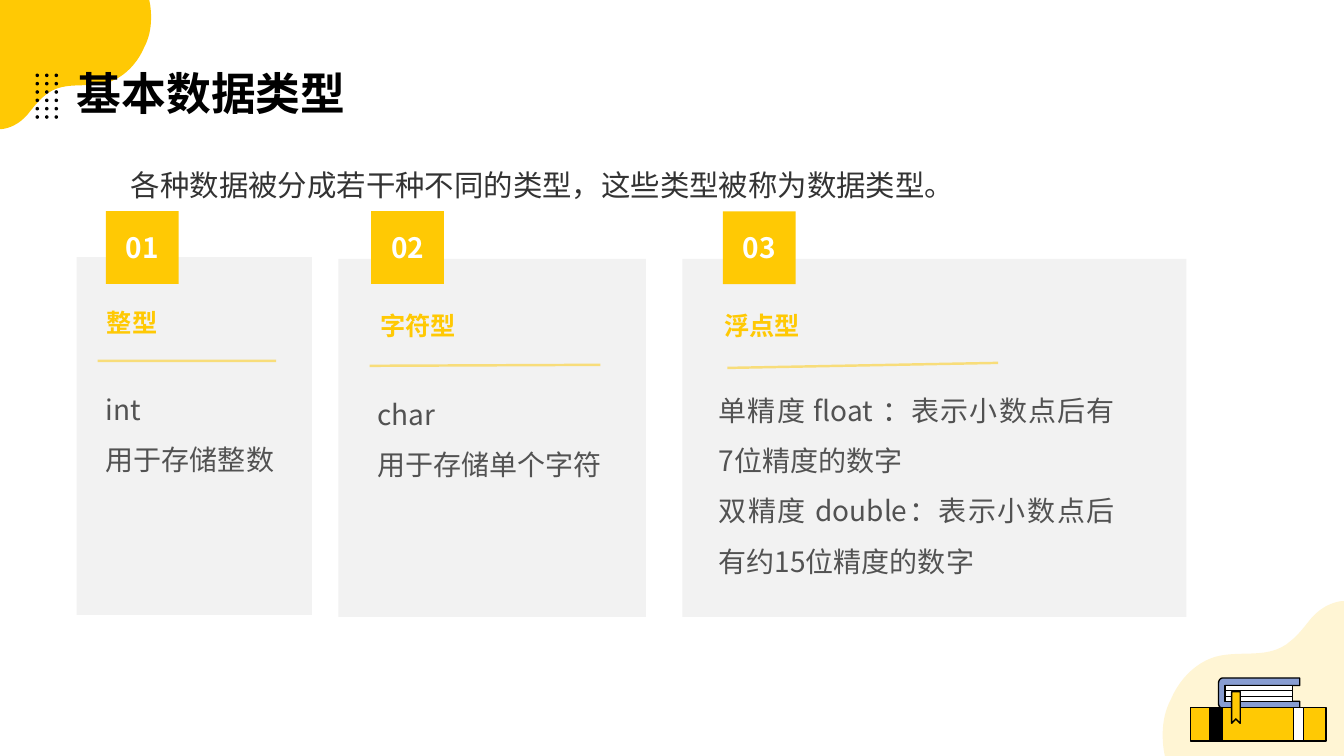
from math import cos, pi, sin

from lxml import etree
from pptx import Presentation
from pptx.dml.color import RGBColor
from pptx.enum.shapes import MSO_CONNECTOR as Connector, MSO_SHAPE as Preset
from pptx.enum.text import MSO_ANCHOR as Anchor, PP_ALIGN as Align
from pptx.oxml.ns import qn
from pptx.util import Pt

FONT = "Noto Sans CJK SC"
YELLOW, BLACK, WHITE, GREY, BLUE = "FFC904", "000000", "FFFFFF", "ADADAD", "889DD2"

# Corner blob: pairs are straight steps, sixes are Bezier curves
BLOB = [(0, 92.2), (1.4, 92.2),
        (7.9, 91.4, 14.4, 87.8, 19.4, 82.1), (23, 77.8, 26.6, 72.7, 31, 69.1),
        (43.2, 57.6, 59, 62.6, 73.4, 59.8), (85.7, 57.6, 97.2, 47.5, 103, 33.8),
        (108, 24.5, 108.7, 13.7, 107.3, 3.6), (106.6, 0), (0, 0)]

# Card box, badge, heading, rule start and end, body box (relative to the card), texts
CARDS = [
    ((54.7, 183.6, 168.1, 255.6), (20.9, -32.7), (21.6, 29.1, 113.8),
     (15, 74.2, 142.6, 74.2), (20.9, 84.7, 165.6), "整型", ["int ", "用于存储整数"]),
    ((241.7, 185, 219.6, 255.6), (23.5, -34.2), (30.1, 29.8, 62),
     (22.3, 76.3, 187.2, 75.6), (27.9, 86.7, 170.6), "字符型", ["char", "用于存储单个字符"]),
    ((487.4, 185, 360, 255.6), (29, -34), (29.9, 29.6, 113.8),
     (32.2, 77.8, 225.6, 74.2), (25.9, 83.8, 283), "浮点型",
     ["单精度 float ：表示小数点后有7位精度的数字",
      "双精度 double：表示小数点后有约15位精度的数字"]),
]


def set_color(target, color, alpha=100):
    target.rgb = RGBColor.from_string(color)
    if alpha < 100:
        node = target._xFill.find(qn("a:srgbClr"))
        etree.SubElement(node, qn("a:alpha")).set("val", str(alpha * 1000))


def style(shape, fill, alpha=100, outline=None):
    shape.shadow.inherit = False
    shape.fill.solid()
    set_color(shape.fill.fore_color, fill, alpha)
    if outline:
        set_color(shape.line.color, outline)
        shape.line.width = Pt(1)
    else:
        shape.line.fill.background()
    return shape


def add_box(page, box, fill, alpha=100, outline=None):
    shape = page.shapes.add_shape(Preset.RECTANGLE, *(Pt(v) for v in box))
    return style(shape, fill, alpha, outline)


def add_line(page, ends, color, width, alpha=100):
    line = page.shapes.add_connector(Connector.STRAIGHT, *(Pt(v) for v in ends))
    line.line.width = Pt(width)
    set_color(line.line.color, color, alpha)
    etree.SubElement(line._element.spPr, qn("a:effectLst"))


def flatten(outline, steps=12):
    points = []
    for part in outline:
        if len(part) == 2:
            points.append(part)
            continue
        ends = [points[-1], part[:2], part[2:4], part[4:]]
        for step in range(1, steps + 1):
            t = step / steps
            weights = ((1 - t) ** 3, 3 * t * (1 - t) ** 2, 3 * t * t * (1 - t), t ** 3)
            points.append(tuple(sum(w * end[axis] for w, end in zip(weights, ends))
                                for axis in (0, 1)))
    return points


def add_outlines(page, origin, outlines, fill, alpha=100, edge=None, scale=1):
    left, top = origin
    builder = None
    for outline in outlines:
        points = [(Pt(left + scale * x), Pt(top + scale * y)) for x, y in flatten(outline)]
        if builder is None:
            builder = page.shapes.build_freeform(*points[0], scale=1.0)
        else:
            builder.move_to(*points[0])
        builder.add_line_segments(points[1:], close=True)
    return style(builder.convert_to_shape(), fill, alpha, edge)


def write(shape, lines, size, color, bold=False, align=Align.LEFT,
          anchor=Anchor.TOP, spacing=None, inset=(0, 0), wrap=True):
    frame = shape.text_frame
    frame.word_wrap = wrap
    frame.vertical_anchor = anchor
    frame.margin_left = frame.margin_right = Pt(inset[0])
    frame.margin_top = frame.margin_bottom = Pt(inset[1])
    for index, line in enumerate(lines):
        para = frame.add_paragraph() if index else frame.paragraphs[0]
        para.add_run().text = line
        para.alignment = align
        if spacing:
            para.line_spacing = spacing
        font = para.font
        font.name, font.size, font.bold = FONT, Pt(size), bold
        set_color(font.color, color)
        latin = font._element.find(qn("a:latin"))
        east = etree.Element(qn("a:ea"))
        east.set("typeface", FONT)
        latin.addnext(east)


def add_text(page, box, lines, size, color, **options):
    write(page.shapes.add_textbox(*(Pt(v) for v in box)), lines, size, color, **options)


def draw_books(page, left, top):
    origin = (left, top)

    def block(x, y, width, height, fill):
        add_box(page, (left + x, top + y, width, height), fill, outline=BLACK)

    # Upper book: cover, then pages
    cover = [(77.8, 0), (23, 0), (21, 0, 19.8, 1.8, 19.8, 4), (19.8, 18),
             (19.8, 20, 21, 21.6, 23, 21.6), (77.8, 21.6), (77.8, 16.6),
             (24.5, 16.6), (24.5, 5.4), (77.8, 5.4)]
    add_outlines(page, origin, [cover], BLUE, edge=BLACK)
    block(24.5, 5.4, 48.2, 11.2, WHITE)
    for y in (9.1, 13):
        add_line(page, (left + 24.5, top + y, left + 72.7, top + y), BLACK, 1)

    # Lower book with its bands
    block(0, 20.9, 96.5, 24.1, YELLOW)
    block(73.4, 20.9, 7.2, 24.1, WHITE)
    block(13.2, 20.9, 9, 24.1, BLACK)

    # Bookmark
    ribbon = [(29.2, 9.7), (35.3, 9.7), (35.3, 32.4), (32.2, 29.2), (29.2, 32.4)]
    add_outlines(page, origin, [ribbon], YELLOW, edge=BLACK)


def draw_dots(page, left, top, radius=1.25, corners=16):
    angles = [2 * pi * corner / corners for corner in range(corners)]
    dots = [[(6.8 * column + radius * (1 + cos(a)), 5.95 * row + radius * (1 + sin(a)))
             for a in angles]
            for row in range(6) for column in range(3)]
    add_outlines(page, (left, top), dots, BLACK)


def draw_card(page, number, card):
    box, badge, heading, rule, body, title, lines = card
    left, top = box[:2]
    add_box(page, box, GREY, alpha=15)
    add_text(page, (left + body[0], top + body[1], body[2], 157), lines, 20, "525252",
             align=Align.JUSTIFY, spacing=1.5)
    tile = add_box(page, (left + badge[0], top + badge[1], 52, 52), YELLOW)
    write(tile, [f"{number:02}"], 20, WHITE, bold=True, align=Align.CENTER,
          anchor=Anchor.MIDDLE, wrap=False)
    x1, y1, x2, y2 = rule
    add_line(page, (left + x1, top + y1, left + x2, top + y2), YELLOW, 1.75, alpha=50)
    add_text(page, (left + heading[0], top + heading[1], heading[2], 35.3), [title],
             18, YELLOW, bold=True, anchor=Anchor.MIDDLE)


def main():
    deck = Presentation()
    deck.slide_width, deck.slide_height = Pt(960), Pt(540)
    page = deck.slides.add_slide(deck.slide_layouts[6])

    # Corner decoration
    add_outlines(page, (960, 540), [BLOB], YELLOW, alpha=17, scale=-1.2)
    draw_books(page, 850.6, 484.3)
    add_outlines(page, (0, 0), [BLOB], YELLOW)
    draw_dots(page, 25.4, 52.6)

    # Title, cards and introduction
    add_text(page, (54.7, 28, 850.3, 57), ["基本数据类型"], 32, BLACK,
             bold=True, anchor=Anchor.BOTTOM)
    for number, card in enumerate(CARDS, 1):
        draw_card(page, number, card)
    add_text(page, (86.4, 105.8, 582.5, 72),
             ["各种数据被分成若干种不同的类型，这些类型被称为数据类型。"],
             21, "333333", spacing=1.4, inset=(7.2, 3.6))
    deck.save("out.pptx")


if __name__ == "__main__":
    main()
